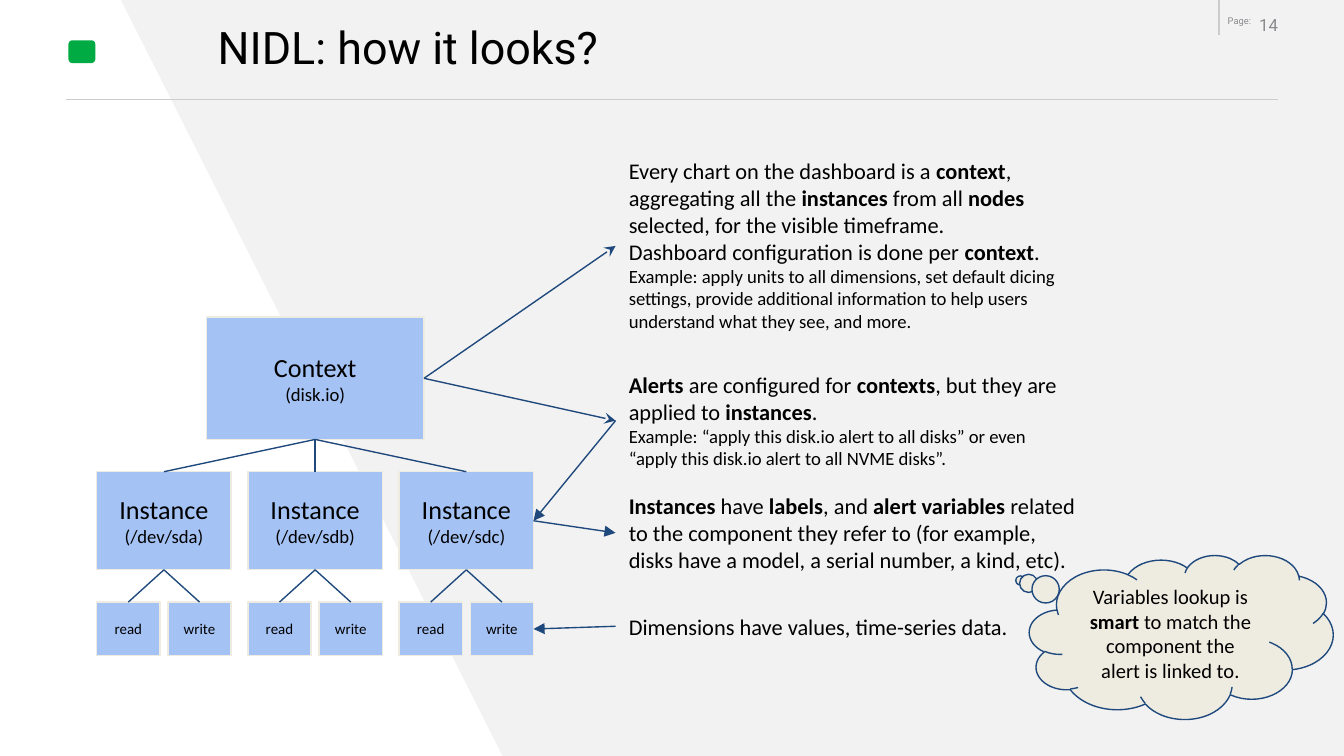
from copy import deepcopy

from pptx import Presentation
from pptx.dml.color import RGBColor
from pptx.enum.shapes import MSO_CONNECTOR, MSO_SHAPE as SHAPE
from pptx.enum.text import MSO_ANCHOR as ANCHOR, MSO_AUTO_SIZE, PP_ALIGN as ALIGN
from pptx.oxml.ns import qn
from pptx.util import Inches, Pt
from lxml.etree import SubElement

BLACK = RGBColor(0x00, 0x00, 0x00)
BLUE = RGBColor(0xA4, 0xC2, 0xF4)
NAVY = RGBColor(0x1F, 0x49, 0x7D)
CREAM = RGBColor(0xEE, 0xEC, 0xE1)
PALE = RGBColor(0xF2, 0xF2, 0xF2)
RULE = RGBColor(0xCC, 0xCC, 0xCC)
GRAY = RGBColor(0x89, 0x8A, 0x8D)
GREEN = RGBColor(0x00, 0xAB, 0x44)
WIDTH = 10
HEIGHT = WIDTH * 9 / 16

# Content: each text is a list of (line, size); ** switches bold on and off
TITLE = "NIDL: how it looks?"
CONTEXT = [("Context", 14), ("(disk.io)", 10)]
DISKS = ["/dev/sda", "/dev/sdb", "/dev/sdc"]
DIMENSIONS = ["read", "write"]
NOTES = {  # name: (top, height, lines)
    "context": (1.07, 1.52, [
        ("Every chart on the dashboard is a **context**,", 12),
        ("aggregating all the **instances** from all **nodes** selected, "
         "for the visible timeframe.", 12),
        ("Dashboard configuration is done per **context**.", 12),
        ("Example: apply units to all dimensions, set default dicing settings, provide "
         "additional information to help users understand what they see, and more.", 10)]),
    "alerts": (2.66, 0.94, [
        ("**Alerts** are configured for **contexts**, but they are applied to "
         "**instances**.", 12),
        ("Example: “apply this disk.io alert to all disks” or even “apply this disk.io "
         "alert to all NVME disks”.", 10)]),
    "instances": (3.56, 0.81, [
        ("**Instances** have **labels**, and **alert variables **related to the component "
         "they refer to (for example, disks have a model, a serial number, a kind, etc).", 12)]),
    "dimensions": (4.46, 0.4, [("Dimensions have values, time-series data.", 12)]),
}
CLOUD = [("Variables lookup is **smart** to match the component the alert is linked to.", 11)]

# Tree grid
TREE_LEFT, TREE_RIGHT = 0.72, 3.97
INSTANCE_W, INSTANCE_TOP, INSTANCE_H = 1, 3.51, 0.73
PITCH = (TREE_RIGHT - TREE_LEFT - INSTANCE_W) / (len(DISKS) - 1)
DIM_W, DIM_TOP, DIM_H = 0.47, 4.48, 0.4
CONTEXT_W, CONTEXT_TOP, CONTEXT_H = 1.62, 2.36, 0.91
NOTE_LEFT, NOTE_W = 4.58, 3.52
TOP, LEFT, BOTTOM, RIGHT = range(4)

prs = Presentation()
prs.slide_width, prs.slide_height = Inches(WIDTH), Inches(HEIGHT)
s = prs.slides.add_slide(prs.slide_layouts[5])


def write(sp, lines, font="Calibri", color=BLACK, align=ALIGN.LEFT,
          anchor=ANCHOR.TOP, inset=0.1):
    tf = sp.text_frame
    tf.word_wrap, tf.auto_size, tf.vertical_anchor = True, MSO_AUTO_SIZE.NONE, anchor
    tf.margin_left = tf.margin_right = tf.margin_top = tf.margin_bottom = Inches(inset)
    p = tf.paragraphs[0]
    p.alignment = align
    for i, (line, size) in enumerate(lines):
        if i:
            p.add_line_break()
            p._p[-1].append(deepcopy(r._r.rPr))
        for j, part in enumerate(line.split("**")):
            if part:
                r = p.add_run()
                r.text = part
                r.font.name, r.font.size = font, Pt(size)
                r.font.bold, r.font.color.rgb = j % 2 == 1, color


def text(x, y, w, h, lines, **style):
    sp = s.shapes.add_textbox(Inches(x), Inches(y), Inches(w), Inches(h))
    write(sp, lines, **style)
    return sp


def paint(sp, fill, line=None):
    sp.shadow.inherit = False
    sp.fill.solid()
    sp.fill.fore_color.rgb = fill
    if line is None:
        sp.line.fill.background()
    else:
        sp.line.color.rgb, sp.line.width = line, Pt(0.75)


def box(x, y, w, h, lines, kind=SHAPE.RECTANGLE, fill=BLUE, line=CREAM):
    sp = s.shapes.add_shape(kind, Inches(x), Inches(y), Inches(w), Inches(h))
    paint(sp, fill, line)
    write(sp, lines, align=ALIGN.CENTER, anchor=ANCHOR.MIDDLE)
    return sp


def line(x1, y1, x2, y2, color):
    c = s.shapes.add_connector(MSO_CONNECTOR.STRAIGHT, Inches(x1), Inches(y1),
                               Inches(x2), Inches(y2))
    c.line.color.rgb, c.line.width = color, Pt(0.75)
    SubElement(c._element.spPr, qn("a:effectLst"))
    return c


def join(a, a_side, b, b_side, arrow=None):
    c = line(0, 0, 1, 1, NAVY)
    c.begin_connect(a, a_side)
    c.end_connect(b, b_side)
    if arrow:
        SubElement(c.line._get_or_add_ln(), qn("a:tailEnd"), type=arrow)


# Background panel, rules and page number
fb = s.shapes.build_freeform(Inches(WIDTH), 0)
fb.add_line_segments([(Inches(x), Inches(y)) for x, y in
                      [(0.9, 0), (3.74, HEIGHT), (WIDTH, HEIGHT)]])
panel = fb.convert_to_shape()
paint(panel, PALE)
s.shapes._spTree.insert(2, panel._element)
line(0.49, 0.74, 9.51, 0.74, RULE)
line(9.07, 0, 9.07, 0.26, RULE)
text(9.02, 0.11, 0.29, 0.09, [("Page:", 5)], font="Roboto", color=GRAY,
     align=ALIGN.RIGHT, inset=0)
text(9.23, 0.11, 0.28, 0.15, [("14", 9)], font="Roboto", color=GRAY,
     align=ALIGN.RIGHT, inset=0)

# Plain mark and title
mark = s.shapes.add_shape(SHAPE.ROUNDED_RECTANGLE, Inches(0.51), Inches(0.3),
                          Inches(0.2), Inches(0.17))
paint(mark, GREEN)
title = s.shapes.title
title.left, title.top, title.width, title.height = map(Inches, (1.62, 0.15, 6.75, 0.4))
write(title, [(TITLE, 24)], font="Roboto", inset=0)

# Tree: context, instances, dimensions
context = box((TREE_LEFT + TREE_RIGHT - CONTEXT_W) / 2, CONTEXT_TOP,
              CONTEXT_W, CONTEXT_H, CONTEXT)
for i, disk in enumerate(DISKS):
    x = TREE_LEFT + i * PITCH
    instance = box(x, INSTANCE_TOP, INSTANCE_W, INSTANCE_H,
                   [("Instance", 14), (f"({disk})", 10)])
    join(context, BOTTOM, instance, TOP)
    for j, name in enumerate(DIMENSIONS):
        dimension = box(x + j * (INSTANCE_W - DIM_W), DIM_TOP, DIM_W, DIM_H, [(name, 8)])
        join(instance, BOTTOM, dimension, TOP)

# Notes, with arrows to and from the last branch of the tree
notes = {name: text(NOTE_LEFT, top, NOTE_W, h, lines)
         for name, (top, h, lines) in NOTES.items()}
join(context, RIGHT, notes["context"], LEFT, "stealth")
join(context, RIGHT, notes["alerts"], LEFT, "stealth")
join(notes["alerts"], LEFT, instance, RIGHT, "triangle")
join(instance, RIGHT, notes["instances"], LEFT, "triangle")
join(notes["dimensions"], LEFT, dimension, RIGHT, "triangle")

# Thought cloud
cloud = box(7.66, 4.13, 2.26, 1.22, CLOUD, SHAPE.CLOUD_CALLOUT, CREAM, NAVY)
cloud.adjustments[0], cloud.adjustments[1] = -0.53, -0.345

prs.save("out.pptx")
